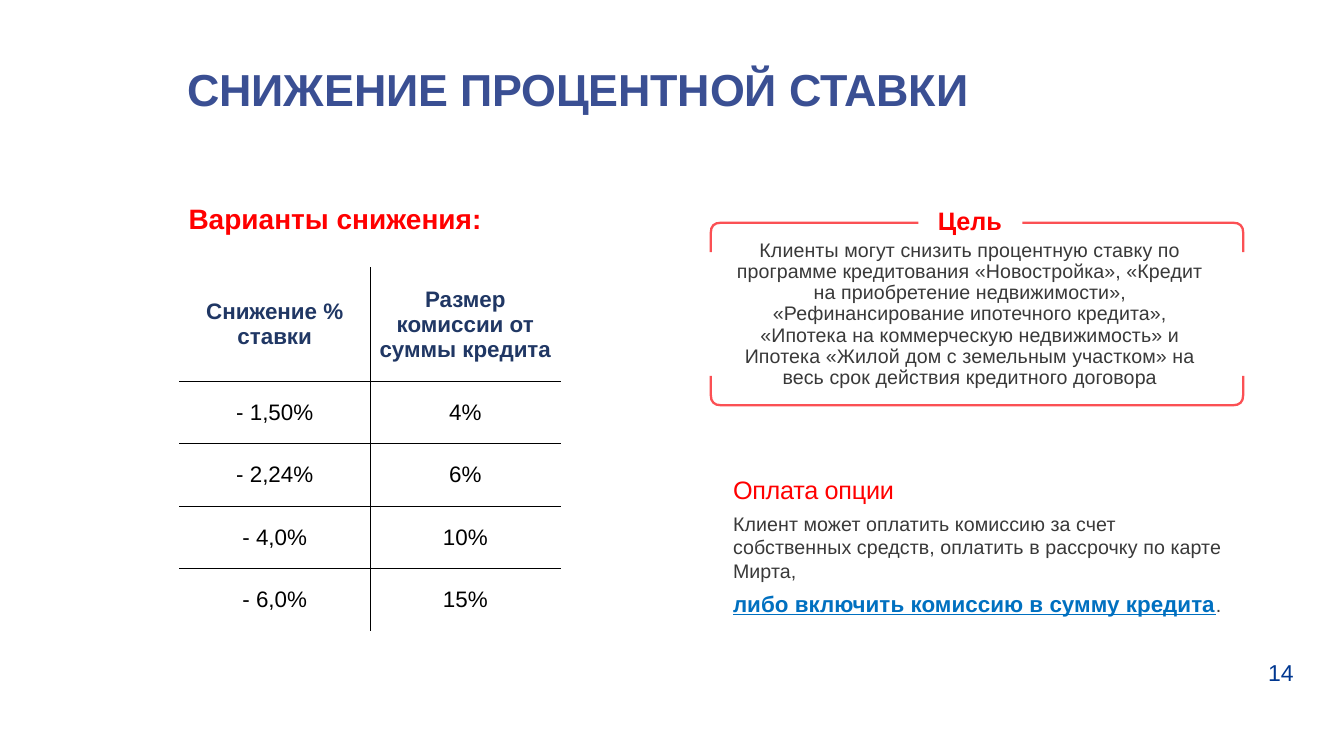
from lxml.etree import SubElement
from pptx import Presentation
from pptx.dml.color import RGBColor
from pptx.enum.text import MSO_ANCHOR as ANCHOR, PP_ALIGN as ALIGN
from pptx.oxml.ns import qn
from pptx.util import Inches, Pt

FONT = "Arial"
COLORS = {"title": "3A4F93", "accent": "FF0000", "text": "393939", "header": "203764",
          "black": "000000", "link": "0070C0", "number": "003790", "frame": "FB5054"}

# Content: a run is (text, size, color, bold, underline, letter spacing in points)
TITLE = ("СНИЖЕНИЕ ПРОЦЕНТНОЙ СТАВКИ", 32, "title", True, False, -0.13)
OPTIONS_HEADING = ("Варианты снижения:", 20, "accent", True, False, 0)
GOAL_HEADING = ("Цель", 18, "accent", True, False, 0)
GOAL = ("Клиенты могут снизить процентную ставку по программе кредитования "
        "«Новостройка», «Кредит на приобретение недвижимости», «Рефинансирование "
        "ипотечного кредита», «Ипотека на коммерческую недвижимость» и Ипотека «Жилой "
        "дом с земельным участком» на весь срок действия кредитного договора",
        14, "text", False, False, 0.05)
PAYMENT = [
    [("Оплата опции", 18, "accent", False, False, -0.2)],
    [("Клиент может оплатить комиссию за счет собственных средств, оплатить "
      "в рассрочку по карте Мирта,", 14, "text", False, False, 0.05)],
    [("либо включить комиссию в сумму кредита", 16, "link", True, True, 0.05),
     (".", 14, "text", False, False, 0.05)],
]
PAGE_NUMBER = ("14", 16.4, "number", False, False, 0)
RATES = [
    ("Снижение % ставки", "Размер комиссии от суммы кредита"),
    ("- 1,50%", "4%"),
    ("- 2,24%", "6%"),
    ("- 4,0%", "10%"),
    ("- 6,0%", "15%"),
]

# Frame geometry in inches
LEFT, TOP, RIGHT, BOTTOM = 7.05, 2.21, 12.33, 4.02
GAP_LEFT, GAP_RIGHT = 9.11, 10.14
ARM, RADIUS = 0.29, 0.1
BRACKETS = [
    [(LEFT, TOP + ARM), (LEFT, TOP), (GAP_LEFT, TOP)],
    [(GAP_RIGHT, TOP), (RIGHT, TOP), (RIGHT, TOP + ARM)],
    [(RIGHT, BOTTOM - ARM), (RIGHT, BOTTOM), (LEFT, BOTTOM), (LEFT, BOTTOM - ARM)],
]


def color(name):
    return RGBColor.from_string(COLORS[name])


def add_run(p, run):
    text, size, name, bold, underline, spacing = run
    r = p.add_run()
    r.text = text
    r.font.name, r.font.size = FONT, Pt(size)
    r.font.bold, r.font.underline = bold, underline
    r.font.color.rgb = color(name)
    if spacing:
        r.font._element.set("spc", str(round(spacing * 100)))


def fill_text(sp, paragraphs, align=ALIGN.LEFT, anchor=ANCHOR.TOP,
              insets=(0.1, 0.05, 0.1, 0.05), line=1.0, before=0):
    tf = sp.text_frame
    tf.word_wrap = True
    tf.vertical_anchor = anchor
    tf.margin_left, tf.margin_top, tf.margin_right, tf.margin_bottom = map(Inches, insets)
    for i, runs in enumerate(paragraphs):
        p = tf.add_paragraph() if i else tf.paragraphs[0]
        p.alignment, p.line_spacing = align, line
        p.space_before = Pt(before if i else 0)
        for run in runs:
            add_run(p, run)


def add_text(slide, box, paragraphs, **style):
    fill_text(slide.shapes.add_textbox(*map(Inches, box)), paragraphs, **style)


def toward(corner, other):
    """Point at RADIUS from the corner on an upright or level side."""
    return tuple(c + max(-RADIUS, min(RADIUS, o - c)) for c, o in zip(corner, other))


def rounded(points):
    path = [points[0]]
    for before, corner, after in zip(points, points[1:], points[2:]):
        a, b = toward(corner, before), toward(corner, after)
        for t in (0, 0.25, 0.5, 0.75, 1):
            path.append(tuple((1 - t) ** 2 * u + 2 * t * (1 - t) * c + t * t * v
                              for u, c, v in zip(a, corner, b)))
    return path + [points[-1]]


def add_bracket(slide, points):
    path = [(Inches(x), Inches(y)) for x, y in rounded(points)]
    builder = slide.shapes.build_freeform(*path[0])
    builder.add_line_segments(path[1:], close=False)
    sp = builder.convert_to_shape()
    sp.shadow.inherit = False
    sp.fill.background()
    sp.line.color.rgb = color("frame")
    sp.line.width = Pt(1.65)


def set_borders(cell, shown):
    tcPr = cell._tc.get_or_add_tcPr()
    for side in "LRTB":
        ln = SubElement(tcPr, qn("a:ln" + side), w=str(Pt(0.5)))
        if side in shown:
            fill = SubElement(ln, qn("a:solidFill"))
            SubElement(fill, qn("a:srgbClr"), val=COLORS["black"])
        else:
            SubElement(ln, qn("a:noFill"))


def add_rates(slide):
    header_h, row_h, col_w = 1.13, 0.62, 1.89
    rows, cols = len(RATES), len(RATES[0])
    table = slide.shapes.add_table(
        rows, cols, Inches(1.78), Inches(2.65), Inches(col_w * cols),
        Inches(header_h + row_h * (rows - 1))).table
    table.horz_banding = False
    for col in table.columns:
        col.width = Inches(col_w)
    for i, values in enumerate(RATES):
        table.rows[i].height = Inches(row_h if i else header_h)
        for j, value in enumerate(values):
            cell = table.cell(i, j)
            # Only the inner grid lines are drawn
            shown = (("L" if j else "") + ("R" if j < cols - 1 else "")
                     + ("T" if i else "") + ("B" if i < rows - 1 else ""))
            set_borders(cell, shown)
            cell.fill.background()
            cell.vertical_anchor = ANCHOR.MIDDLE
            cell.margin_left = cell.margin_right = cell.margin_top = Inches(0.01)
            cell.margin_bottom = 0
            p = cell.text_frame.paragraphs[0]
            p.alignment = ALIGN.CENTER
            add_run(p, (value, 16, "black" if i else "header", i == 0, False, 0))


def main():
    prs = Presentation()
    prs.slide_width, prs.slide_height = Inches(13.33), Inches(7.5)
    slide = prs.slides.add_slide(prs.slide_layouts[5])

    # Goal frame
    for points in BRACKETS:
        add_bracket(slide, points)

    # Title
    title = slide.shapes.title
    title.left, title.top, title.width, title.height = map(Inches, (1.78, 0.62, 10.5, 0.93))
    fill_text(title, [[TITLE]], insets=(0.08, 0.05, 0.1, 0.05), line=0.9)

    # Goal
    add_text(slide, (7.14, 2.41, 4.96, 1.42), [[GOAL]], align=ALIGN.CENTER,
             anchor=ANCHOR.MIDDLE, line=0.9)
    add_text(slide, (GAP_LEFT, 2.02, 1.02, 0.24), [[GOAL_HEADING]],
             align=ALIGN.CENTER, line=0.9)

    # Rate options
    add_text(slide, (1.78, 1.99, 3.46, 0.35), [[OPTIONS_HEADING]], insets=(0.09, 0.01, 0, 0))
    add_rates(slide)

    # Payment and page number
    add_text(slide, (7.14, 4.69, 5.12, 1.44), PAYMENT, insets=(0.13, 0.01, 0, 0),
             line=1.01, before=5)
    add_text(slide, (12.2, 6.48, 0.73, 0.35), [[PAGE_NUMBER]], align=ALIGN.RIGHT)

    prs.save("out.pptx")


if __name__ == "__main__":
    main()
